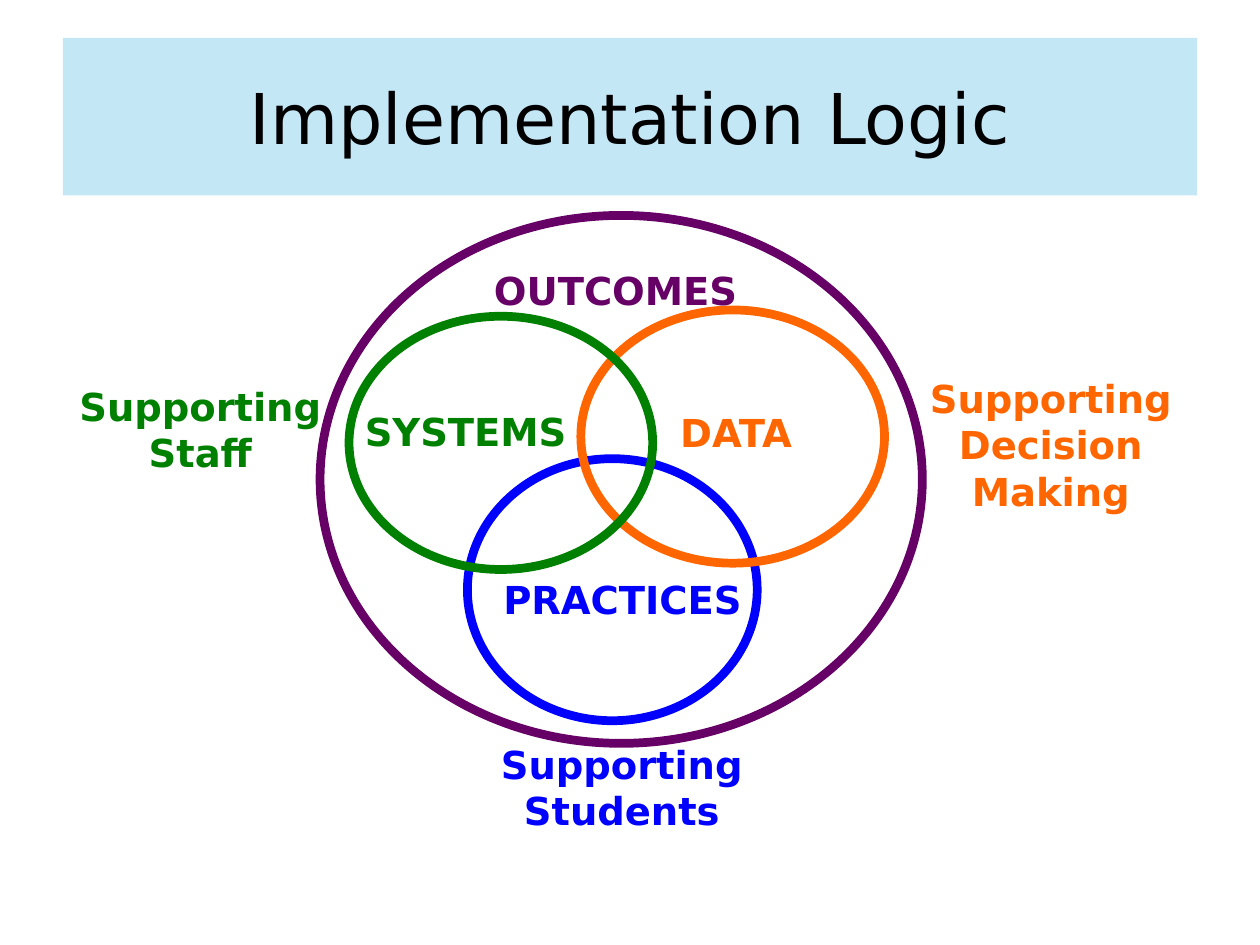
from dataclasses import dataclass

import lxml.etree
import pptx
import pptx.dml.color
import pptx.enum.shapes
import pptx.enum.text
import pptx.oxml.ns
import pptx.util

Inches = pptx.util.Inches
SHAPE = pptx.enum.shapes.MSO_SHAPE
ALIGN = pptx.enum.text.PP_ALIGN


@dataclass(frozen=True)
class Theme:
    font: str = "DejaVu Sans"
    title_size: int = 40
    label_size: int = 22
    ring_width: int = 5
    title_text: str = "000000"
    banner: str = "A9DCF2"
    banner_opacity: int = 68
    paper: str = "FFFFFF"
    outcomes: str = "660066"
    systems: str = "008000"
    data: str = "FF6600"
    practices: str = "0000FF"


THEME = Theme()


def rgb(value):
    return pptx.dml.color.RGBColor.from_string(value)


def place(box, left, top, width, height):
    """Turn an offset and size in inches into slide lengths within box."""
    return (Inches(box[0] + left), Inches(box[1] + top),
            Inches(width), Inches(height))


def write(sp, lines, color, size, bold=False, align=ALIGN.CENTER):
    tf = sp.text_frame
    tf.word_wrap = True
    tf.text = "\n".join(lines)
    for p in tf.paragraphs:
        p.alignment = align
        for r in p.runs:
            r.font.name = THEME.font
            r.font.size = pptx.util.Pt(size)
            r.font.bold = bold
            r.font.color.rgb = rgb(color)


def add_filled_rectangle(s, at, color):
    sp = s.shapes.add_shape(SHAPE.RECTANGLE, *at)
    sp.shadow.inherit = False
    sp.fill.solid()
    sp.fill.fore_color.rgb = rgb(color)
    sp.line.fill.background()
    sp.text_frame.vertical_anchor = pptx.enum.text.MSO_ANCHOR.TOP
    return sp


def add_ring(s, at, color):
    sp = s.shapes.add_shape(SHAPE.OVAL, *at)
    sp.shadow.inherit = False
    sp.fill.background()
    sp.line.color.rgb = rgb(color)
    sp.line.width = pptx.util.Pt(THEME.ring_width)


def add_title(s, box):
    sp = add_filled_rectangle(s, place(box, 0, 0, *box[2:]), THEME.banner)
    qn = pptx.oxml.ns.qn
    color = sp.fill._xPr.find(qn("a:solidFill")).find(qn("a:srgbClr"))
    alpha = lxml.etree.SubElement(color, qn("a:alpha"))
    alpha.set("val", str(THEME.banner_opacity * 1000))
    sp.text_frame.vertical_anchor = pptx.enum.text.MSO_ANCHOR.MIDDLE
    write(sp, ["Implementation Logic"], THEME.title_text, THEME.title_size)


def add_venn(s, box):
    """Three overlapping rings in an outer ring, with labels inside and around."""
    rings = [
        ((3.3, 1.93, 2.3, 2.08), THEME.practices),
        ((4.2, 0.75, 2.41, 2.01), THEME.data),
        ((2.36, 0.8, 2.41, 2.01), THEME.systems),
    ]
    labels = [
        ((2.36, 1.48, 1.85, 0.43), ["SYSTEMS"], THEME.systems, ALIGN.CENTER),
        ((3.18, 2.81, 2.7, 0.43), ["PRACTICES"], THEME.practices, ALIGN.CENTER),
        ((4.89, 1.49, 1.25, 0.43), ["DATA"], THEME.data, ALIGN.LEFT),
        ((0, 1.28, 2.36, 1.04), ["Supporting", "Staff"], THEME.systems, ALIGN.CENTER),
        ((6.78, 1.22, 2.3, 1.17), ["Supporting", "Decision", "Making"],
         THEME.data, ALIGN.CENTER),
        ((3.23, 0.36, 2.49, 0.43), ["OUTCOMES"], THEME.outcomes, ALIGN.CENTER),
    ]
    for at, color in rings:
        add_ring(s, place(box, *at), color)
    for at, lines, color, align in labels:
        sp = s.shapes.add_textbox(*place(box, *at))
        write(sp, lines, color, THEME.label_size, True, align)
    sp = add_filled_rectangle(s, place(box, 2.36, 4.12, 4.33, 0.74), THEME.paper)
    write(sp, ["Supporting", "Students"], THEME.practices, THEME.label_size, True)
    add_ring(s, place(box, 2.13, 0, 4.78, 4.19), THEME.outcomes)


def main():
    prs = pptx.Presentation()
    prs.slide_width, prs.slide_height = Inches(10), Inches(7.5)
    s = prs.slides.add_slide(prs.slide_layouts[6])
    add_title(s, (0.5, 0.3, 9, 1.25))
    add_venn(s, (0.41, 1.71, 9.08, 4.86))
    prs.save("out.pptx")


if __name__ == "__main__":
    main()
